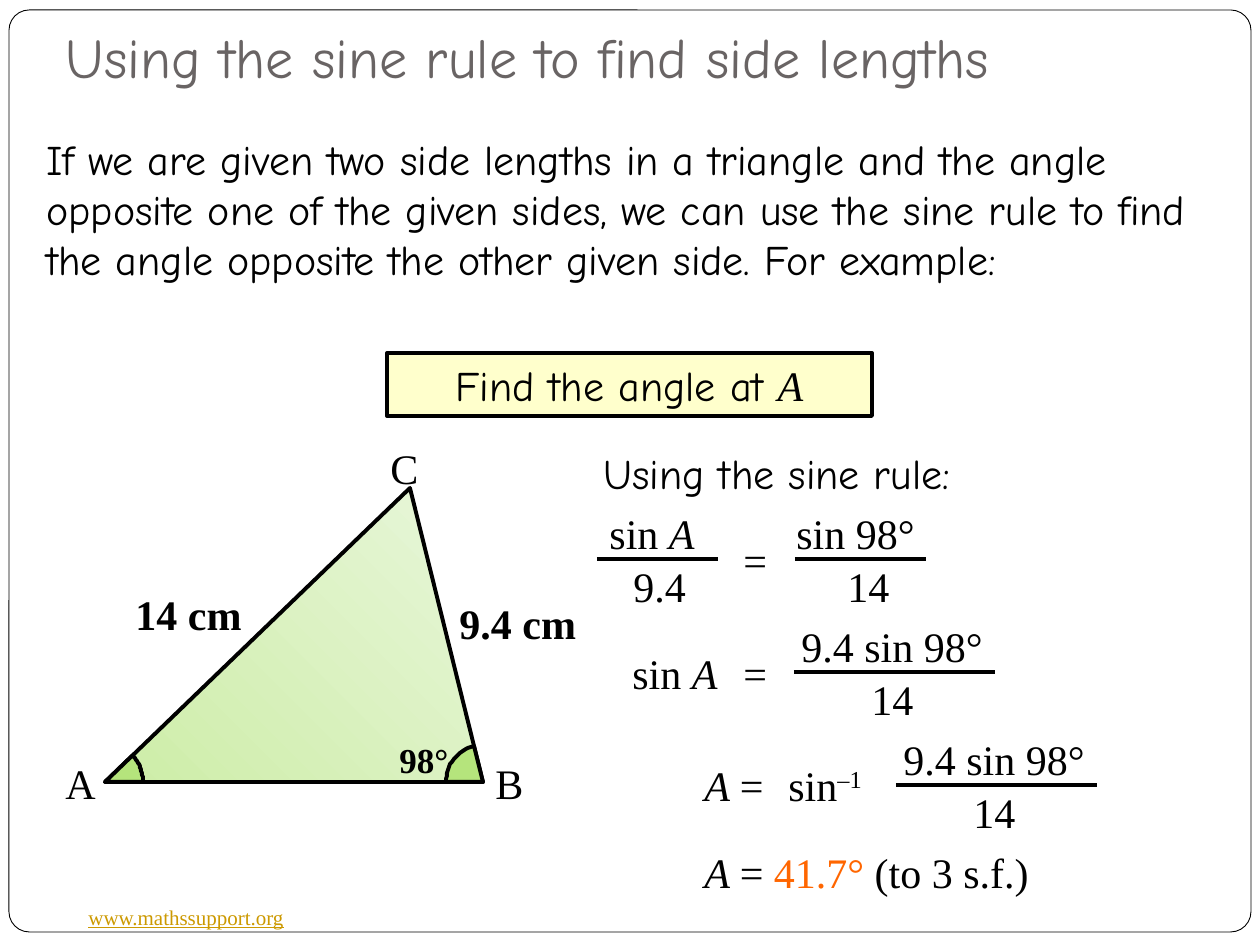
from math import atan2, cos, pi, sin

from lxml.etree import SubElement
from pptx import Presentation
from pptx.dml.color import RGBColor
from pptx.enum.shapes import MSO_CONNECTOR, MSO_SHAPE
from pptx.enum.text import MSO_ANCHOR, MSO_AUTO_SIZE, PP_ALIGN
from pptx.oxml.ns import qn
from pptx.util import Emu, Pt


class Theme:
    hand, serif = "Comic Neue", "Times New Roman"
    title, body, angle, footer = Pt(32), Pt(24), Pt(20), Pt(12)
    thin, thick = Pt(0.5), Pt(2.25)
    black, white, grey = "000000", "FFFFFF", "696464"
    gold, orange, cream = "CC9900", "FF6600", "FFFFCC"
    sector, tri_dark, tri_light = "B5E47C", "CDEDA7", "E8F6DA"


HAND = {"name": Theme.hand, "size": Theme.body}
SERIF = {"name": Theme.serif, "size": Theme.body}
ITALIC = SERIF | {"italic": True}
BOLD = SERIF | {"bold": True}
SIN_A = [("sin ", SERIF), ("A", ITALIC)]


def px(n):
    return Emu(round(n * 914400 / 126))


def rgb(value):
    return RGBColor.from_string(value)


def set_attrs(obj, values):
    for key, value in values.items():
        setattr(obj, key, value)


def write(tf, runs, frame=None):
    """Fill a text frame with (text, font values[, colour]) runs."""
    set_attrs(tf, {"word_wrap": False, "auto_size": MSO_AUTO_SIZE.SHAPE_TO_FIT_TEXT} | (frame or {}))
    p = tf.paragraphs[0]
    for text, font, *colour in runs:
        r = p.add_run()
        r.text = text
        set_attrs(r.font, font)
        r.font.color.rgb = rgb(colour[0] if colour else Theme.black)
    return p


def add_text(s, x, y, w, h, runs, frame=None):
    box = s.shapes.add_textbox(px(x), px(y), px(w), px(h))
    return write(box.text_frame, runs, frame)


def style(sp, fill, width):
    sp.shadow.inherit = False
    sp.fill.solid()
    sp.fill.fore_color.rgb = rgb(fill)
    sp.line.color.rgb = rgb(Theme.black)
    sp.line.width = width


def add_outline(s, points, fill):
    builder = s.shapes.build_freeform(*points[0], scale=px(1))
    builder.add_line_segments(points[1:], close=True)
    sp = builder.convert_to_shape()
    style(sp, fill, Theme.thick)
    return sp


def add_sector(s, centre, radius, start, end, steps=16):
    cx, cy = centre
    turns = [start + (end - start) * i / steps for i in range(steps + 1)]
    arc = [(cx + radius * cos(t), cy - radius * sin(t)) for t in turns]
    add_outline(s, [centre, *arc], Theme.sector)


def fraction(s, x, y, bar, top, bottom):
    """Place a fraction by the left end of its bar; top and bottom are (dx, width, runs)."""
    for dy, (dx, w, runs) in ((-58, top), (-5, bottom)):
        add_text(s, x + dx, y + dy, w, 64, runs)
    line = s.shapes.add_connector(MSO_CONNECTOR.STRAIGHT, px(x), px(y), px(x + bar), px(y))
    line.line.color.rgb = rgb(Theme.black)
    line.line.width = Theme.thick
    SubElement(line._element.spPr, qn("a:effectLst"))


def background(s, x, y, w, h):
    # Rounded page frame and site address
    sp = s.shapes.add_shape(MSO_SHAPE.ROUNDED_RECTANGLE, px(x), px(y), px(w), px(h))
    sp.adjustments[0] = 0.022
    style(sp, Theme.white, Theme.thin)
    link = {"name": Theme.serif, "size": Theme.footer, "underline": True}
    add_text(s, x + 67, y + h - 34, 223, 38, [("www.mathssupport.org", link, Theme.gold)])


def title(s, x, y, w, h):
    font = HAND | {"size": Theme.title}
    add_text(s, x, y, w, h, [("Using the sine rule to find side lengths", font, Theme.grey)],
             {"word_wrap": True, "auto_size": MSO_AUTO_SIZE.NONE,
              "vertical_anchor": MSO_ANCHOR.BOTTOM, "margin_bottom": Pt(7.2)})


def intro(s, x, y, w, h):
    add_text(s, x, y, w, h, [(
        "If we are given two side lengths in a triangle and the angle opposite one of the "
        "given sides, we can use the sine rule to find the angle opposite the other given "
        "side. For example:", HAND)], {"word_wrap": True})


def question(s, x, y, w, h):
    sp = s.shapes.add_shape(MSO_SHAPE.RECTANGLE, px(x), px(y), px(w), px(h))
    style(sp, Theme.cream, Theme.thick)
    p = write(sp.text_frame, [("Find the angle at ", HAND), ("A", ITALIC)],
              {"word_wrap": True, "vertical_anchor": MSO_ANCHOR.TOP})
    p.alignment = PP_ALIGN.CENTER


def triangle(s, x, y, w, h):
    a, b, c = (x + 52, y + h), (x + w, y + h), (x + 357, y + 52)
    sp = add_outline(s, [a, b, c], Theme.tri_dark)
    sp.fill.gradient()
    sp.fill.gradient_angle = 45
    for stop, colour in zip(sp.fill.gradient_stops, (Theme.tri_dark, Theme.tri_light)):
        stop.color.rgb = rgb(colour)

    # Angle marks at B and A
    add_sector(s, b, 37, atan2(b[1] - c[1], c[0] - b[0]), pi)
    add_sector(s, a, 38, 0, atan2(a[1] - c[1], c[0] - a[0]))

    # Side, angle and vertex labels
    for dx, dy, lw, lh, text, font in (
        (394, 155, 169, 64, "9.4 cm", BOLD),
        (70, 146, 150, 64, "14 cm", BOLD),
        (334, 296, 83, 55, "98°", BOLD | {"size": Theme.angle}),
        (0, 315, 57, 64, "A", SERIF),
        (430, 315, 53, 64, "B", SERIF),
        (325, 0, 50, 64, "C", SERIF),
    ):
        add_text(s, x + dx, y + dy, lw, lh, [(text, font)])


def solution(s, x, y):
    nine, fourteen = [("9.4", SERIF)], [("14", SERIF)]
    quotient = (-5, 237, [("9.4 sin 98°", SERIF)]), (65, 71, fourteen)
    equals = [("=", SERIF)]
    add_text(s, x, y, 407, 63, [("Using the sine rule:", HAND)])

    # Sine rule with the known values
    fraction(s, x + 6, y + 118, 121, (0, 118, SIN_A), (24, 88, nine))
    add_text(s, x + 140, y + 87, 47, 64, equals)
    fraction(s, x + 204, y + 118, 131, (-11, 161, [("sin 98°", SERIF)]), (40, 71, fourteen))

    # Sine of A
    add_text(s, x + 29, y + 200, 118, 64, SIN_A)
    add_text(s, x + 140, y + 200, 47, 64, equals)
    fraction(s, x + 203, y + 231, 201, *quotient)

    # Inverse sine
    add_text(s, x + 101, y + 312, 87, 63, [("A ", ITALIC), ("=", SERIF)])
    p = add_text(s, x + 185, y + 312, 106, 64, [("sin", SERIF), ("–1", SERIF)])
    p.runs[1].font._element.set("baseline", "30000")
    fraction(s, x + 305, y + 344, 201, *quotient)

    # Answer
    add_text(s, x + 101, y + 399, 353, 63, [
        ("A ", ITALIC), ("= ", SERIF), ("41.7°", SERIF, Theme.orange), (" (to 3 s.f.)", SERIF)])


def main():
    prs = Presentation()
    prs.slide_width, prs.slide_height = px(1260), px(945)
    s = prs.slides.add_slide(prs.slide_layouts[6])
    background(s, 9, 10, 1242, 922)
    title(s, 53, 23, 1134, 79)
    intro(s, 34, 127, 1200, 165)
    question(s, 387, 353, 485, 63)
    triangle(s, 53, 436, 430, 346)
    solution(s, 591, 441)
    prs.save("out.pptx")


if __name__ == "__main__":
    main()
